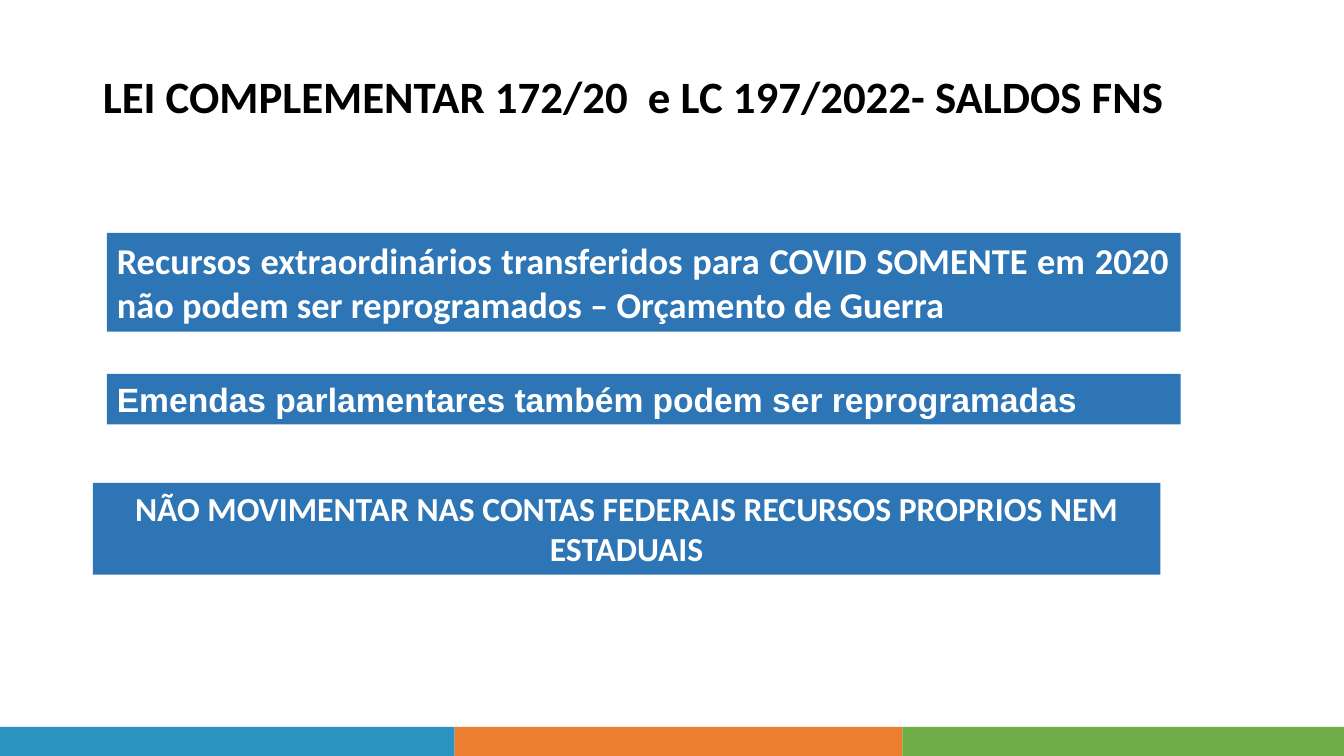
import pptx
import pptx.dml.color
import pptx.enum.shapes
import pptx.enum.text
import pptx.util

Inches = pptx.util.Inches
ALIGN = pptx.enum.text.PP_ALIGN
ANCHOR = pptx.enum.text.MSO_ANCHOR

SLIDE_WIDTH, SLIDE_HEIGHT = 13.33, 7.5
FOOTER_HEIGHT = 0.29
TITLE = "LEI COMPLEMENTAR 172/20  e LC 197/2022- SALDOS FNS"
TITLE_BOX = (0.92, 0.63, 11.5, 0.78)
BOX_COLOR = "2E75B5"

# Left, top, width, height, text, format
MESSAGES = [
    (1.06, 2.31, 10.65, 0.98,
     "Recursos extraordinários transferidos para COVID SOMENTE em 2020 "
     "não podem ser reprogramados – Orçamento de Guerra",
     {"size": 26, "align": ALIGN.JUSTIFY, "anchor": ANCHOR.MIDDLE}),
    (1.06, 3.71, 10.65, 0.5,
     "Emendas parlamentares também podem ser reprogramadas",
     {"size": 24, "font": "Arial"}),
    (0.92, 4.79, 10.59, 0.91,
     "NÃO MOVIMENTAR NAS CONTAS FEDERAIS RECURSOS PROPRIOS NEM ESTADUAIS",
     {"size": 24, "align": ALIGN.CENTER}),
]
# Width, color, from left to right
FOOTER_BANDS = [(4.51, "2A93C1"), (4.44, "ED7D31"), (4.38, "70AD47")]


def rgb(color):
    return pptx.dml.color.RGBColor.from_string(color)


def write_text(shape, text, *, size, font="Calibri", color="FFFFFF",
               align=ALIGN.LEFT, anchor=ANCHOR.TOP):
    frame = shape.text_frame
    frame.word_wrap = True
    frame.vertical_anchor = anchor
    paragraph = frame.paragraphs[0]
    paragraph.alignment = align
    paragraph.line_spacing = 1.0
    run = paragraph.add_run()
    run.text = text
    run.font.name = font
    run.font.size = pptx.util.Pt(size)
    run.font.bold = True
    run.font.color.rgb = rgb(color)


def add_rectangle(slide, left, top, width, height, color):
    shape = slide.shapes.add_shape(
        pptx.enum.shapes.MSO_SHAPE.RECTANGLE,
        Inches(left), Inches(top), Inches(width), Inches(height))
    shape.shadow.inherit = False
    shape.fill.solid()
    shape.fill.fore_color.rgb = rgb(color)
    shape.line.fill.background()
    return shape


def main():
    presentation = pptx.Presentation()
    presentation.slide_width = Inches(SLIDE_WIDTH)
    presentation.slide_height = Inches(SLIDE_HEIGHT)
    slide = presentation.slides.add_slide(presentation.slide_layouts[5])

    left = 0
    for width, color in FOOTER_BANDS:
        add_rectangle(slide, left, SLIDE_HEIGHT - FOOTER_HEIGHT,
                      width, FOOTER_HEIGHT, color)
        left += width

    title = slide.shapes.title
    title.left, title.top, title.width, title.height = map(Inches, TITLE_BOX)
    write_text(title, TITLE, size=32, color="000000")

    for left, top, width, height, text, text_format in MESSAGES:
        box = add_rectangle(slide, left, top, width, height, BOX_COLOR)
        write_text(box, text, **text_format)

    presentation.save("out.pptx")


if __name__ == "__main__":
    main()
